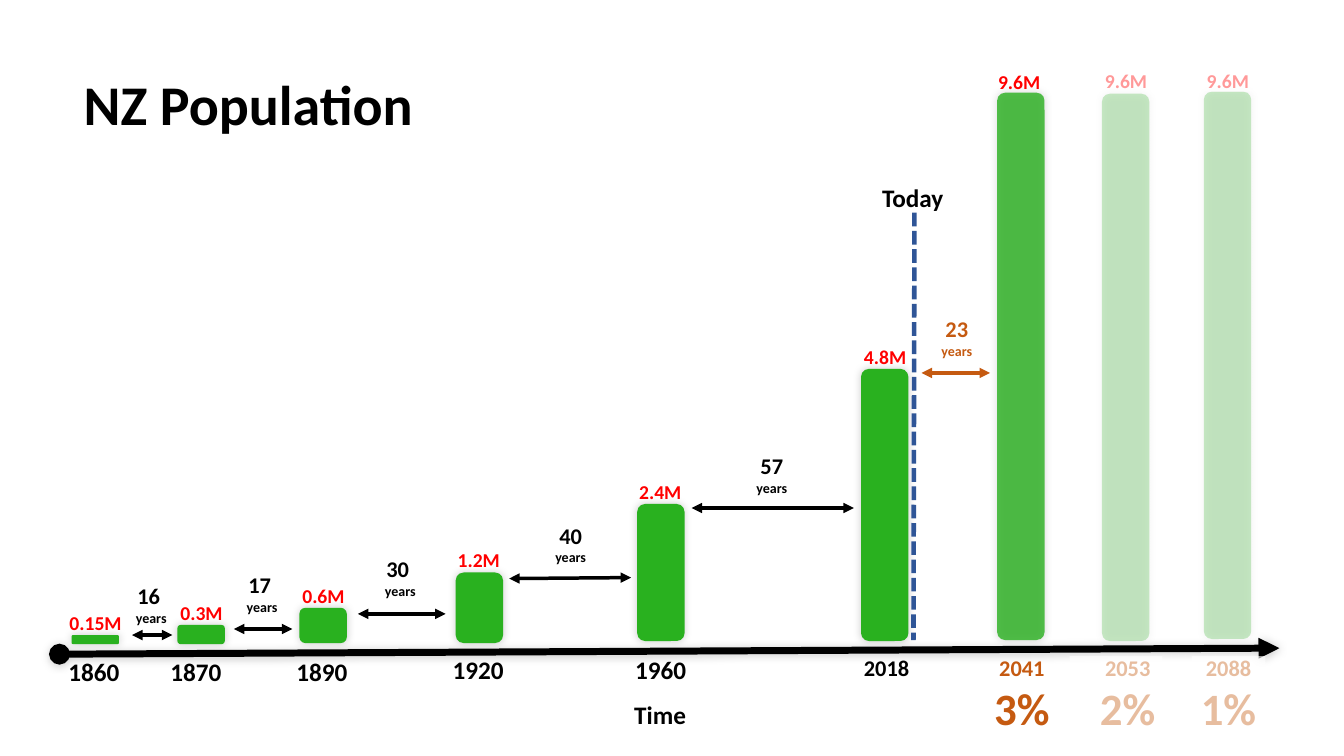
from lxml import etree
from pptx import Presentation
from pptx.dml.color import RGBColor
from pptx.enum.dml import MSO_LINE
from pptx.enum.shapes import MSO_CONNECTOR, MSO_SHAPE
from pptx.enum.text import MSO_ANCHOR, MSO_AUTO_SIZE, PP_ALIGN
from pptx.oxml.ns import qn
from pptx.util import Pt

PX = 9144  # 100 px to the inch
LEFT, CENTER = PP_ALIGN.LEFT, PP_ALIGN.CENTER
TOP, MIDDLE = MSO_ANCHOR.TOP, MSO_ANCHOR.MIDDLE
NO_AUTOFIT = MSO_AUTO_SIZE.NONE
STRAIGHT = MSO_CONNECTOR.STRAIGHT
RECTANGLE, ROUNDED = MSO_SHAPE.RECTANGLE, MSO_SHAPE.ROUNDED_RECTANGLE
DASH = MSO_LINE.SQUARE_DOT
FONT = "Calibri"
BLACK, WHITE, RED = "000000", "FFFFFF", "FF0000"
GREEN, ORANGE, BLUE = "29B11F", "C55A11", "2F5597"

# Bar box, value, left shift of the value, year, left shift and top of the year, year size
PAST_BARS = [
    ((71, 630, 47, 9), "0.15M", 12, "1860", 13, 646, 18),
    ((176, 620, 47, 19), "0.3M", 7, "1870", 17, 646, 18),
    ((297, 603, 47, 35), "0.6M", 7, "1890", 13, 646, 18),
    ((452, 568, 47, 70), "1.2M", 8, "1920", 13, 644, 18),
    ((632, 500, 47, 136), "2.4M", 8, "1960", 12, 644, 18),
    ((854, 366, 47, 270), "4.8M", 7, "2018", 7, 644, 16),
]
# Bar box, opacity, value position, year, growth rate, caption box
FUTURE_BARS = [
    ((989, 92, 47, 543), 80, (980, 64), "2041", "3%", (973, 644, 81, 91)),
    ((1093, 93, 47, 543), 25, (1086, 63), "2053", "2%", (1060, 644, 117, 91)),
    ((1194, 91, 47, 543), 25, (1187, 63), "2088", "1%", (1178, 644, 81, 91)),
]
# Years, caption box, arrow start, arrow end, colour
GAPS = [
    ("16 ", (121, 573, 58, 54), (131, 630), (171, 630), BLACK),
    ("17 ", (223, 562, 74, 54), (232, 624), (290, 624), BLACK),
    ("30 ", (343, 546, 108, 54), (355, 609), (442, 609), BLACK),
    ("40", (499, 513, 134, 54), (505, 574), (626, 573), BLACK),
    ("57", (677, 444, 177, 54), (686, 504), (847, 504), BLACK),
    ("23", (905, 308, 88, 54), (914, 370), (982, 370), ORANGE),
]
VEILS = [(1178, 63, 81, 28), (1182, 651, 73, 78), (1061, 651, 92, 78), (1082, 60, 81, 28)]


def emu(lengths):
    return [length * PX for length in lengths]


def rgb(colour):
    return RGBColor.from_string(colour)


def add_element(parent, tag, **attributes):
    element = etree.SubElement(parent, qn(tag))
    for name, value in attributes.items():
        element.set(name, str(value))
    return element


def add_shadow(effects):
    shadow = add_element(effects, "a:outerShdw", blurRad=Pt(6), dist=0, dir=315 * 60000)
    colour = add_element(shadow, "a:srgbClr", val=BLACK)
    add_element(colour, "a:alpha", val=20000)


def write_text(shape, lines, sizes, colour=BLACK, align=LEFT, anchor=TOP):
    frame = shape.text_frame
    frame.word_wrap = True
    frame.auto_size = NO_AUTOFIT
    frame.vertical_anchor = anchor
    for index, (line, size) in enumerate(zip(lines, sizes)):
        paragraph = frame.add_paragraph() if index else frame.paragraphs[0]
        paragraph.alignment = align
        run = paragraph.add_run()
        run.text = line
        run.font.name = FONT
        run.font.size = Pt(size)
        run.font.bold = True
        run.font.color.rgb = rgb(colour)


def add_text(slide, box, lines, sizes, **text_format):
    write_text(slide.shapes.add_textbox(*emu(box)), lines, sizes, **text_format)


def add_block(slide, box, kind, colour, opacity=100, shadow=False):
    shape = slide.shapes.add_shape(kind, *emu(box))
    shape.fill.solid()
    shape.fill.fore_color.rgb = rgb(colour)
    shape.line.fill.background()
    shape.shadow.inherit = False
    properties = shape._element.spPr
    if opacity < 100:
        add_element(properties.find(qn("a:solidFill"))[0], "a:alpha", val=opacity * 1000)
    if shadow:
        add_shadow(properties.find(qn("a:effectLst")))


def add_line(slide, start, end, colour, width, head=None, tail=None, dash=None, shadow=False):
    connector = slide.shapes.add_connector(STRAIGHT, *emu(start + end))
    connector.line.color.rgb = rgb(colour)
    connector.line.width = Pt(width)
    if dash:
        connector.line.dash_style = dash
    properties = connector._element.spPr
    outline = properties.find(qn("a:ln"))
    for tag, kind in (("a:headEnd", head), ("a:tailEnd", tail)):
        if kind:
            add_element(outline, tag, type=kind)
    effects = add_element(properties, "a:effectLst")
    if shadow:
        add_shadow(effects)


def add_title(slide, box):
    title = slide.shapes.title
    title.left, title.top, title.width, title.height = emu(box)
    write_text(title, ["NZ Population"], [40], anchor=MIDDLE)


def add_time_axis(slide, box):
    left, top, width, height = box
    add_line(slide, (left, top + height), (left + width, top), BLACK, 5,
             head="oval", tail="triangle", shadow=True)
    add_text(slide, (0, top + 46, 1315, 40), ["Time "], [18], align=CENTER)


def add_past_bar(slide, box, value, value_shift, year, year_shift, year_top, year_size):
    left, top = box[:2]
    add_block(slide, box, ROUNDED, GREEN, shadow=True)
    add_text(slide, (left - value_shift, top - 29, 81, 34), [value], [14], colour=RED)
    add_text(slide, (left - year_shift, year_top, 81, 40), [year], [year_size])


def add_future_bar(slide, box, opacity, value_position, year, rate, caption_box):
    add_block(slide, box, ROUNDED, GREEN, opacity, shadow=True)
    add_text(slide, (*value_position, 81, 34), ["9.6M"], [14], colour=RED)
    add_text(slide, caption_box, [year, rate], [16, 32], colour=ORANGE, align=CENTER)


def add_gap(slide, years, box, start, end, colour):
    add_text(slide, box, [years, "years"], [16, 10], colour=colour, align=CENTER)
    add_line(slide, start, end, colour, 2.5, head="triangle", tail="triangle")


def add_today(slide, box):
    left, top, width, height = box
    add_text(slide, (left, top, width, 40), ["Today"], [18])
    add_line(slide, (left + 42, top + 35), (left + 41, top + height), BLUE, 3.25, dash=DASH)


def main():
    presentation = Presentation()
    presentation.slide_width, presentation.slide_height = emu((1333, 750))
    slide = presentation.slides.add_slide(presentation.slide_layouts[5])

    add_title(slide, (73, 64, 473, 77))
    add_time_axis(slide, (59, 643, 1210, 6))
    for bar in PAST_BARS:
        add_past_bar(slide, *bar)
    for gap in GAPS:
        add_gap(slide, *gap)
    add_today(slide, (865, 176, 81, 459))
    for bar in FUTURE_BARS:
        add_future_bar(slide, *bar)

    # White veils fade the labels of the two slower forecasts
    for box in VEILS:
        add_block(slide, box, RECTANGLE, WHITE, 60)

    presentation.save("out.pptx")


if __name__ == "__main__":
    main()
